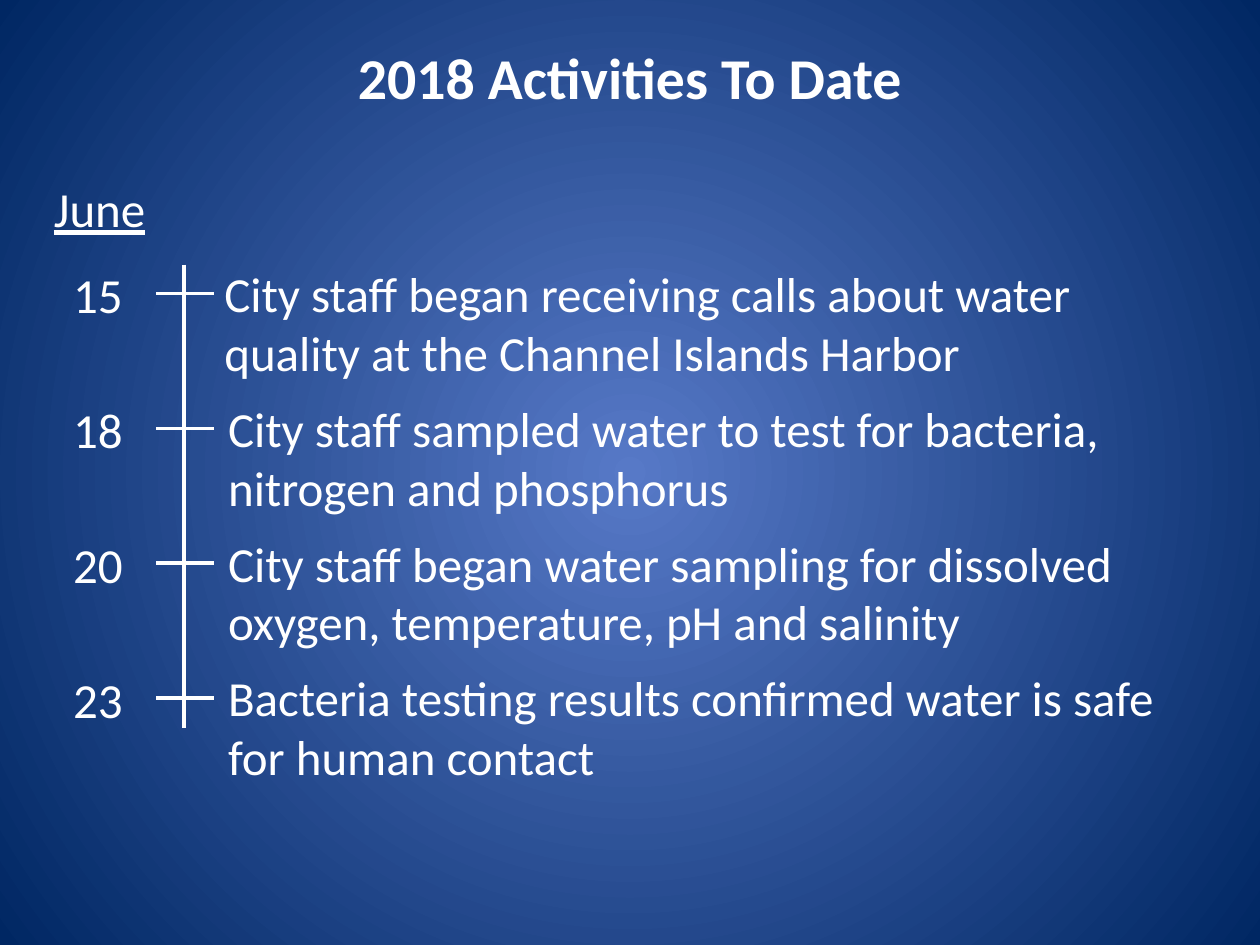
from dataclasses import dataclass

from lxml import etree
from pptx import Presentation
from pptx import util as u
from pptx.dml import color
from pptx.enum import shapes, text
from pptx.oxml import ns


@dataclass(frozen=True)
class Theme:
    font: str = "Calibri"
    ink: color.RGBColor = color.RGBColor(0xFF, 0xFF, 0xFF)
    glow: color.RGBColor = color.RGBColor(0x57, 0x79, 0xC7)
    edge: color.RGBColor = color.RGBColor(0x00, 0x27, 0x63)
    title_size: int = 33
    body_size: int = 28
    rule_width: int = 2


THEME = Theme()
ROW_PITCH = 1.07

# day, activity, left edge of the activity within the timeline
ACTIVITIES = [
    ("15", "City staff began receiving calls about water quality at the Channel Islands Harbor", 1.20),
    ("18", "City staff sampled water to test for bacteria, nitrogen and phosphorus", 1.23),
    ("20", "City staff began water sampling for dissolved oxygen, temperature, pH and salinity", 1.23),
    ("23", "Bacteria testing results confirmed water is safe for human contact", 1.23),
]


def set_all(target, values):
    for name, value in values.items():
        setattr(target, name, value)


def write(frame, words, size, inset=(0.1, 0.05), align=text.PP_ALIGN.LEFT, **font_format):
    """Fill a text frame with one formatted paragraph."""
    across, down = map(u.Inches, inset)
    set_all(frame, dict(word_wrap=True, margin_left=across, margin_right=across,
                        margin_top=down, margin_bottom=down))
    paragraph = frame.paragraphs[0]
    paragraph.alignment = align
    run = paragraph.add_run()
    run.text = words
    set_all(run.font, dict(name=THEME.font, size=u.Pt(size), **font_format))
    run.font.color.rgb = THEME.ink


def add_label(slide, box, words, **options):
    label = slide.shapes.add_textbox(*map(u.Inches, box))
    write(label.text_frame, words, THEME.body_size, **options)
    return label


def add_rule(slide, start, end):
    rule = slide.shapes.add_connector(
        shapes.MSO_CONNECTOR.STRAIGHT, *map(u.Inches, (*start, *end)))
    rule.line.color.rgb = THEME.ink
    rule.line.width = u.Pt(THEME.rule_width)
    etree.SubElement(rule.element.spPr, ns.qn("a:effectLst"))


def paint_background(slide):
    """Radial gradient, bright at the centre of the slide."""
    fill = slide.background.fill
    fill.gradient()
    for stop, shade, position in zip(fill.gradient_stops, (THEME.glow, THEME.edge), (0, 1)):
        stop.color.rgb = shade
        stop.position = position
    gradient = slide.element.find(".//" + ns.qn("a:gradFill"))
    linear = gradient.find(ns.qn("a:lin"))
    circle = etree.Element(ns.qn("a:path"), path="circle")
    etree.SubElement(circle, ns.qn("a:fillToRect"), dict.fromkeys("ltrb", "50000"))
    gradient.replace(linear, circle)


def place_title(slide, box, words):
    title = slide.shapes.title
    set_all(title, dict(zip(("left", "top", "width", "height"), map(u.Inches, box))))
    title.text_frame.vertical_anchor = text.MSO_ANCHOR.MIDDLE
    write(title.text_frame, words, THEME.title_size, align=text.PP_ALIGN.CENTER, bold=True)


def place_month(slide, box, month):
    label = add_label(slide, box, month, underline=True)
    label.text_frame.auto_size = text.MSO_AUTO_SIZE.SHAPE_TO_FIT_TEXT


def place_timeline(slide, box, activities):
    left, top, width, height = box
    axis = left + 0.92
    add_rule(slide, (axis, top + 0.05), (axis, top + height))
    for row, (day, activity, indent) in enumerate(activities):
        y = top + row * ROW_PITCH
        add_label(slide, (left, y + 0.01, 0.5, 0.39), day, inset=(0.04, 0.04))
        add_rule(slide, (axis - 0.22, y + 0.28), (axis + 0.24, y + 0.28))
        add_label(slide, (left + indent, y, width - indent, 1.12), activity, inset=(0.04, 0.04))


def main():
    deck = Presentation()
    deck.slide_width, deck.slide_height = u.Inches(10), u.Inches(7.5)
    slide = deck.slides.add_slide(deck.slide_layouts.get_by_name("Title Only"))
    paint_background(slide)
    place_title(slide, (0.5, 0.28, 9, 0.65), "2018 Activities To Date")
    place_month(slide, (0.33, 1.37, 1.12, 0.57), "June")
    place_timeline(slide, (0.54, 2.05, 9.05, 3.73), ACTIVITIES)
    deck.save("out.pptx")


if __name__ == "__main__":
    main()
